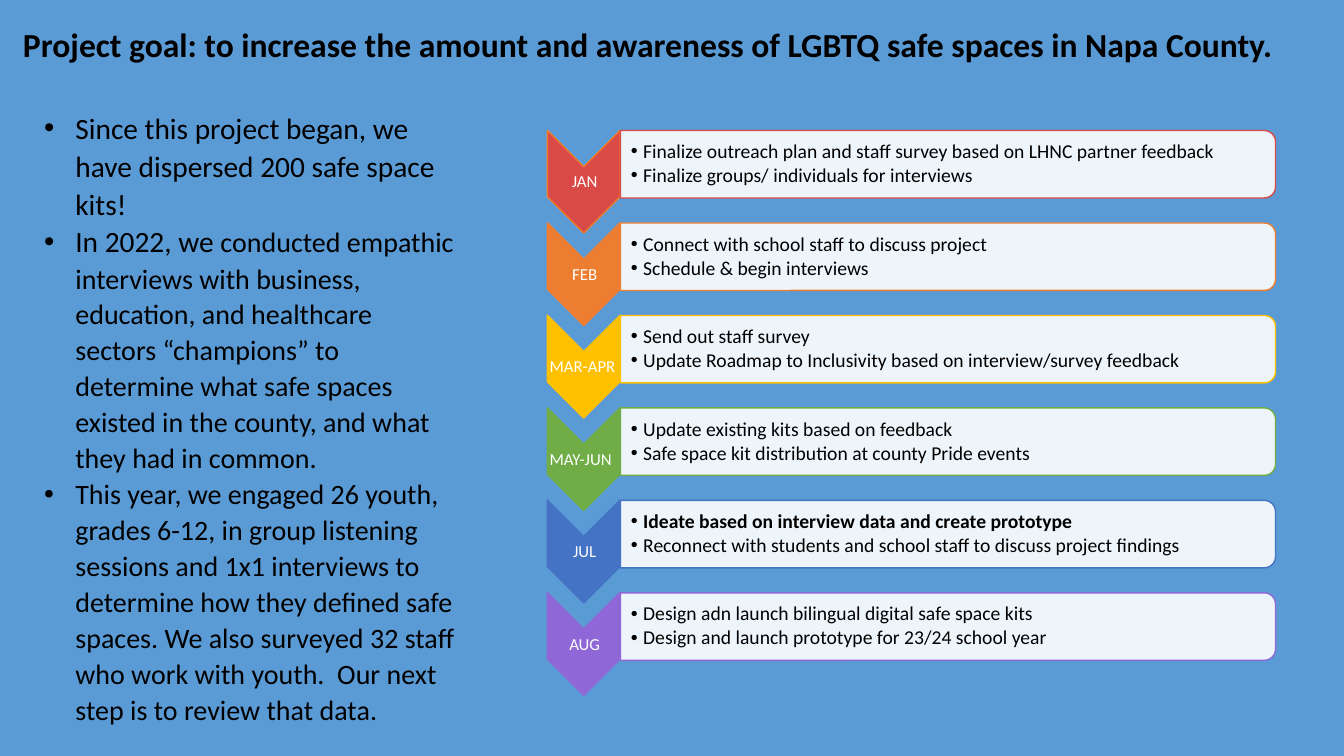
import pptx
import pptx.dml.color
import pptx.enum.shapes
import pptx.enum.text
import pptx.oxml.ns
import pptx.util
from lxml import etree

Cm, Pt = pptx.util.Cm, pptx.util.Pt
RGB = pptx.dml.color.RGBColor
SHAPE = pptx.enum.shapes.MSO_SHAPE
ALIGN = pptx.enum.text.PP_ALIGN
ANCHOR = pptx.enum.text.MSO_ANCHOR
qn = pptx.oxml.ns.qn

BLUE = RGB(0x5B, 0x9B, 0xD5)
BLACK = RGB(0, 0, 0)
WHITE = RGB(0xFF, 0xFF, 0xFF)
RED = RGB(0xD9, 0x49, 0x45)
ORANGE = RGB(0xED, 0x7D, 0x31)
GOLD = RGB(0xFF, 0xC0, 0x00)
GREEN = RGB(0x70, 0xAD, 0x47)
INDIGO = RGB(0x44, 0x72, 0xC4)
PURPLE = RGB(0x8F, 0x67, 0xD7)

TITLE = "Project goal: to increase the amount and awareness of LGBTQ safe spaces in Napa County."

# Each paragraph is a list of (text, font format) runs
PROGRESS = [
    [("Since this project began, we have dispersed 200 safe space kits!", {"size": Pt(21)})],
    [("In 2022, we ", {"size": Pt(21)}),
     ("conducted empathic interviews with business, education, and healthcare sectors "
      "“champions” to determine what safe spaces existed in the county, and what they "
      "had in common.", {"size": Pt(20)})],
    [("This year, we engaged 26 youth, grades 6-12, in group listening sessions and 1x1 "
      "interviews to determine how they defined safe spaces. We also surveyed 32 staff who "
      "work with youth.  Our next step is to review that data.", {"size": Pt(20)})],
]

# Month, label alignment, colour, chevron outline, tasks
PLAIN, BOLD = {"size": Pt(14)}, {"size": Pt(14), "bold": True}
TIMELINE = [
    ("JAN", ALIGN.CENTER, RED, ORANGE, [
        ("Finalize outreach plan and staff survey based on LHNC partner feedback", PLAIN),
        ("Finalize groups/ individuals for interviews", PLAIN)]),
    ("FEB", ALIGN.CENTER, ORANGE, ORANGE, [
        ("Connect with school staff to discuss project", PLAIN),
        ("Schedule & begin interviews", PLAIN)]),
    ("MAR-APR", ALIGN.LEFT, GOLD, GOLD, [
        ("Send out staff survey", PLAIN),
        ("Update Roadmap to Inclusivity based on interview/survey feedback", PLAIN)]),
    ("MAY-JUN", ALIGN.LEFT, GREEN, GREEN, [
        ("Update existing kits based on feedback", PLAIN),
        ("Safe space kit distribution at county Pride events", PLAIN)]),
    ("JUL", ALIGN.CENTER, INDIGO, INDIGO, [
        ("Ideate based on interview data and create prototype", BOLD),
        ("Reconnect with students and school staff to discuss project findings", PLAIN)]),
    ("AUG", ALIGN.CENTER, PURPLE, PURPLE, [
        ("Design adn launch bilingual digital safe space kits", PLAIN),
        ("Design and launch prototype for 23/24 school year", PLAIN)]),
]
ROW_PITCH = 2.33


class Deck:
    """Holds the font and the current slide."""

    font = "Calibri"

    def __init__(self, slide):
        self.slide = slide

    def apply(self, obj, fmt):
        for name, value in fmt.items():
            setattr(obj, name, value)

    def text(self, x, y, w, h, paragraphs, color, frame=None, para=None, bullet=None):
        """Text box; bullet is (left margin, hanging indent) in cm."""
        box = self.slide.shapes.add_textbox(Cm(x), Cm(y), Cm(w), Cm(h))
        tf = box.text_frame
        self.apply(tf, {"word_wrap": True, **(frame or {})})
        for i, runs in enumerate(paragraphs):
            p = tf.add_paragraph() if i else tf.paragraphs[0]
            self.apply(p, para or {})
            if bullet:
                self.bullet(p, *bullet)
            for content, fmt in runs:
                r = p.add_run()
                r.text = content
                self.apply(r.font, {"name": self.font, **fmt})
                r.font.color.rgb = color

    def bullet(self, p, margin, hang):
        pPr = p._p.get_or_add_pPr()
        pPr.set("marL", str(int(Cm(margin))))
        pPr.set("indent", str(-int(Cm(hang))))
        etree.SubElement(pPr, qn("a:buFont")).set("typeface", "Arial")
        etree.SubElement(pPr, qn("a:buChar")).set("char", "•")

    def turned_shape(self, kind, cx, cy, w, h, fill, line, opacity=None):
        """Preset shape centred on (cx, cy) and turned a quarter clockwise."""
        sp = self.slide.shapes.add_shape(
            kind, Cm(cx - w / 2), Cm(cy - h / 2), Cm(w), Cm(h))
        sp.shadow.inherit = False
        sp.rotation = 90
        sp.fill.solid()
        sp.fill.fore_color.rgb = fill
        sp.line.color.rgb = line
        sp.line.width = Pt(1)
        if opacity:
            clr = sp._element.spPr.find(qn("a:solidFill")).find(qn("a:srgbClr"))
            etree.SubElement(clr, qn("a:alpha")).set("val", str(opacity * 1000))

    def month(self, top, label, align, color, outline, tasks):
        """One timeline row: chevron, month label, bar and its tasks."""
        thin = Cm(0.03)
        frame = {"vertical_anchor": ANCHOR.MIDDLE, "margin_left": thin,
                 "margin_right": thin, "margin_top": thin, "margin_bottom": thin}
        self.turned_shape(SHAPE.CHEVRON, 14.71, top + 1.29, 2.59, 1.83, color, outline)
        self.text(13.82, top + 0.91, 1.83, 0.79, [[(label, {"size": Pt(12)})]], WHITE,
                  frame, {"alignment": align, "line_spacing": 0.9})
        self.turned_shape(SHAPE.ROUND_2_SAME_RECTANGLE, 23.89, top + 0.85, 1.7, 16.51,
                          WHITE, color, opacity=90)
        self.text(15.62, top + 0.09, 16.43, 1.52, [[task] for task in tasks], BLACK,
                  {**frame, "margin_left": Cm(0.28)},
                  {"line_spacing": 0.9, "space_after": Pt(2)}, bullet=(0.31, 0.31))


def main():
    prs = pptx.Presentation()
    prs.slide_width, prs.slide_height = Cm(33.87), Cm(19.05)
    s = prs.slides.add_slide(prs.slide_layouts[6])
    s.background.fill.solid()
    s.background.fill.fore_color.rgb = BLUE
    deck = Deck(s)

    # Title
    deck.text(0.33, 0.48, 33.2, 1.27, [[(TITLE, {"size": Pt(24), "bold": True})]], BLACK)

    # Progress so far
    deck.text(-0.41, 2.59, 12.22, 15.95, PROGRESS, BLACK,
              para={"line_spacing": 1.07}, bullet=(2.06, 0.79))

    # Monthly timeline
    for i, row in enumerate(TIMELINE):
        deck.month(3.29 + i * ROW_PITCH, *row)

    prs.save("out.pptx")


if __name__ == "__main__":
    main()
